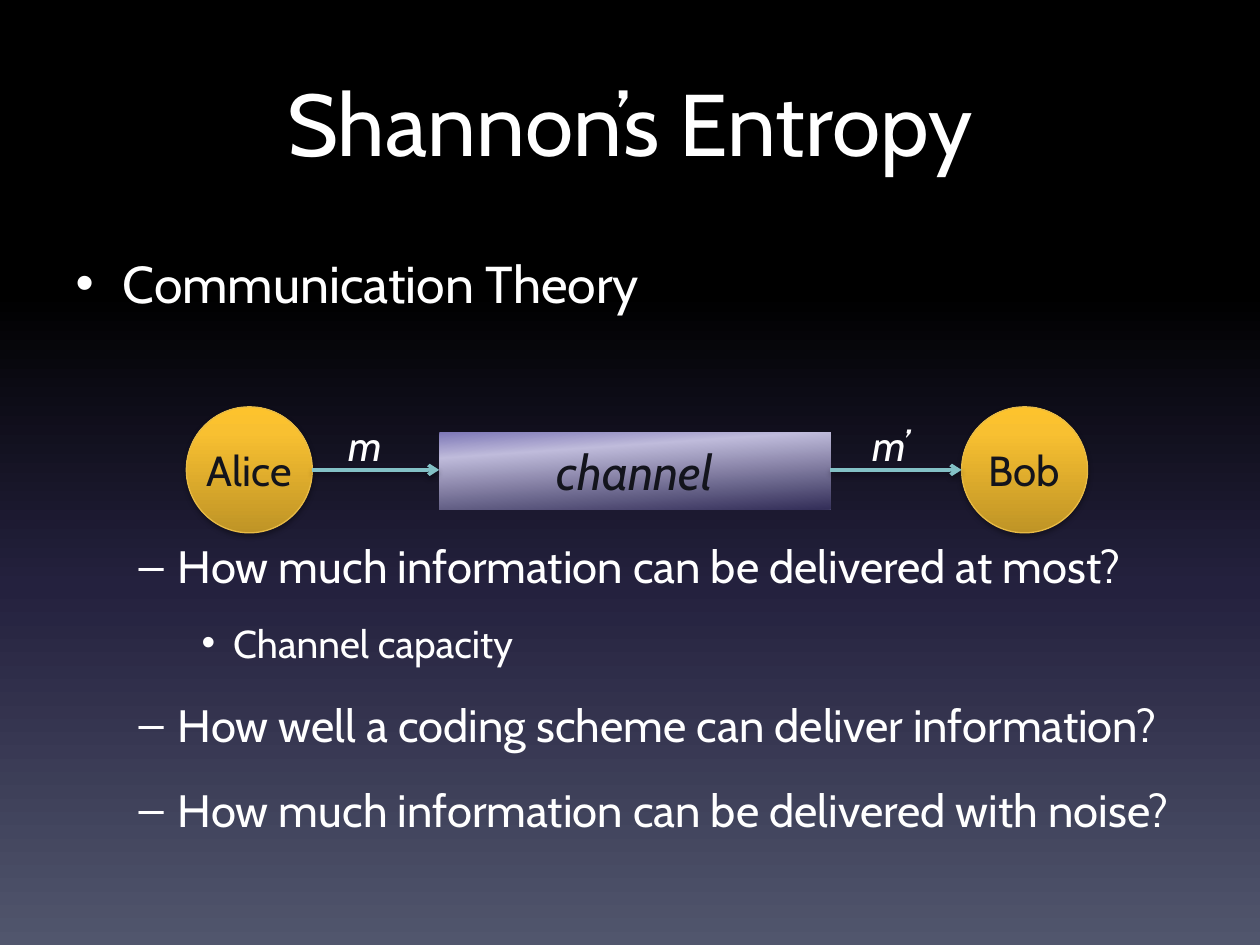
from pptx import Presentation
from pptx.dml.color import RGBColor
from pptx.enum.shapes import MSO_CONNECTOR, MSO_SHAPE
from pptx.enum.text import MSO_ANCHOR, MSO_AUTO_SIZE, PP_ALIGN
from pptx.oxml.ns import qn
from pptx.util import Pt
from lxml.etree import SubElement

HUES = {
    "text": "FFFFFF", "dark": "13141C", "rim": "E7BA45",
    "arrow": "83C1C6", "shade": "000000",
}
NIGHT = [(0, "000000"), (31, "000000"), (62, "24213E"), (100, "51566D")]
GOLD = [(0, "BF9426"), (80, "F8C031"), (100, "FDC32D")]
VIOLET = [(0, "7E78B7"), (25, "BFBBDB"), (100, "342F59")]

# level, text, size, space before
POINTS = [
    (0, "Communication Theory", 29.6, 0),
    (1, "How much information can be delivered at most?", 25.9, 116),
    (2, "Channel capacity", 22.2, 4.4),
    (1, "How well a coding scheme can deliver information?", 25.9, 5.2),
    (1, "How much information can be delivered with noise?", 25.9, 5.2),
]


class Deck:
    def __init__(self):
        self.prs = Presentation()
        self.prs.slide_width, self.prs.slide_height = Pt(720), Pt(540)
        self.slide = self.prs.slides.add_slide(self.prs.slide_layouts[1])
        self.font = "Cabin"

    def style(self, para, size, hue="text", slant=False):
        for run in para.runs:
            font = run.font
            font.name, font.size, font.italic = self.font, Pt(size), slant
            font.color.rgb = RGBColor.from_string(HUES[hue])

    def place(self, shape, left, top, width, height):
        shape.left, shape.top = Pt(left), Pt(top)
        shape.width, shape.height = Pt(width), Pt(height)

    def grade(self, fill, host, stops, angle):
        """Give a fill a linear gradient, its angle counted clockwise."""
        fill.gradient()
        fill.gradient_angle = 360 - angle
        held = next(host.iter(qn("a:gsLst")))
        for old in list(held):
            held.remove(old)
        for pos, hue in stops:
            stop = SubElement(held, qn("a:gs"), pos=str(pos * 1000))
            SubElement(stop, qn("a:srgbClr"), val=hue)

    def shade(self, effects, alpha, dist):
        shadow = SubElement(
            effects, qn("a:outerShdw"), blurRad=str(Pt(3.1)),
            dist=str(Pt(dist)), dir="5400000", rotWithShape="0")
        hue = SubElement(shadow, qn("a:srgbClr"), val=HUES["shade"])
        SubElement(hue, qn("a:alpha"), val=str(alpha * 1000))

    def backdrop(self, stops):
        self.grade(self.slide.background.fill, self.slide.element, stops, 90)

    def title(self, text):
        shape = self.slide.shapes.title
        self.place(shape, 36, 36, 648, 90)
        frame = shape.text_frame
        frame.text = text
        frame.vertical_anchor = MSO_ANCHOR.TOP
        frame.auto_size = MSO_AUTO_SIZE.NONE
        frame.paragraphs[0].alignment = PP_ALIGN.CENTER
        self.style(frame.paragraphs[0], 50)

    def points(self, items):
        shape = self.slide.placeholders[1]
        self.place(shape, 36, 126, 648, 366.5)
        frame = shape.text_frame
        frame.text = "\n".join(text for _, text, _, _ in items)
        frame.auto_size = MSO_AUTO_SIZE.NONE
        for para, (level, _, size, gap) in zip(frame.paragraphs, items):
            para.level = level
            para.line_spacing = 1.4
            para.space_before = Pt(gap)
            self.style(para, size)

    def node(self, kind, box, text, size, stops, angle, slant=False):
        shape = self.slide.shapes.add_shape(kind, *map(Pt, box))
        self.grade(shape.fill, shape.element, stops, angle)
        shape.line.fill.background()
        shape.shadow.inherit = False
        frame = shape.text_frame
        frame.margin_left = frame.margin_right = 0
        frame.margin_top = frame.margin_bottom = 0
        frame.vertical_anchor = MSO_ANCHOR.MIDDLE
        frame.text = text
        frame.paragraphs[0].alignment = PP_ALIGN.CENTER
        self.style(frame.paragraphs[0], size, "dark", slant)
        return shape

    def person(self, left, name):
        shape = self.node(
            MSO_SHAPE.OVAL, (left, 232.5, 72, 72), name, 24, GOLD, 270)
        shape.line.color.rgb = RGBColor.from_string(HUES["rim"])
        shape.line.width = Pt(0.75)
        self.shade(next(shape.element.iter(qn("a:effectLst"))), 35, 1.8)

    def message(self, start, end, y, text, left, width):
        """Draw an arrow grouped with the label above it."""
        group = self.slide.shapes.add_group_shape().shapes
        arrow = group.add_connector(
            MSO_CONNECTOR.STRAIGHT, Pt(start), Pt(y), Pt(end), Pt(y))
        arrow.line.color.rgb = RGBColor.from_string(HUES["arrow"])
        arrow.line.width = Pt(2)
        SubElement(arrow.line._get_or_add_ln(), qn("a:tailEnd"), type="arrow")
        props = arrow.element.find(qn("p:spPr"))
        self.shade(SubElement(props, qn("a:effectLst")), 38, 1.6)

        label = group.add_textbox(Pt(left), Pt(236), Pt(width), Pt(36))
        frame = label.text_frame
        frame.text = text
        frame.word_wrap = False
        frame.auto_size = MSO_AUTO_SIZE.SHAPE_TO_FIT_TEXT
        self.style(frame.paragraphs[0], 24, slant=True)


def main():
    deck = Deck()
    deck.backdrop(NIGHT)
    deck.title("Shannon’s Entropy")
    deck.points(POINTS)
    deck.person(106.5, "Alice")
    deck.person(549.5, "Bob")
    deck.node(MSO_SHAPE.RECTANGLE, (251, 247, 223.5, 44), "channel", 28,
              VIOLET, 86, slant=True)
    deck.message(178.5, 251, 268.5, "m", 192, 40)
    deck.message(474.5, 549.5, 268.5, "m’", 491.5, 45)
    deck.prs.save("out.pptx")


if __name__ == "__main__":
    main()
